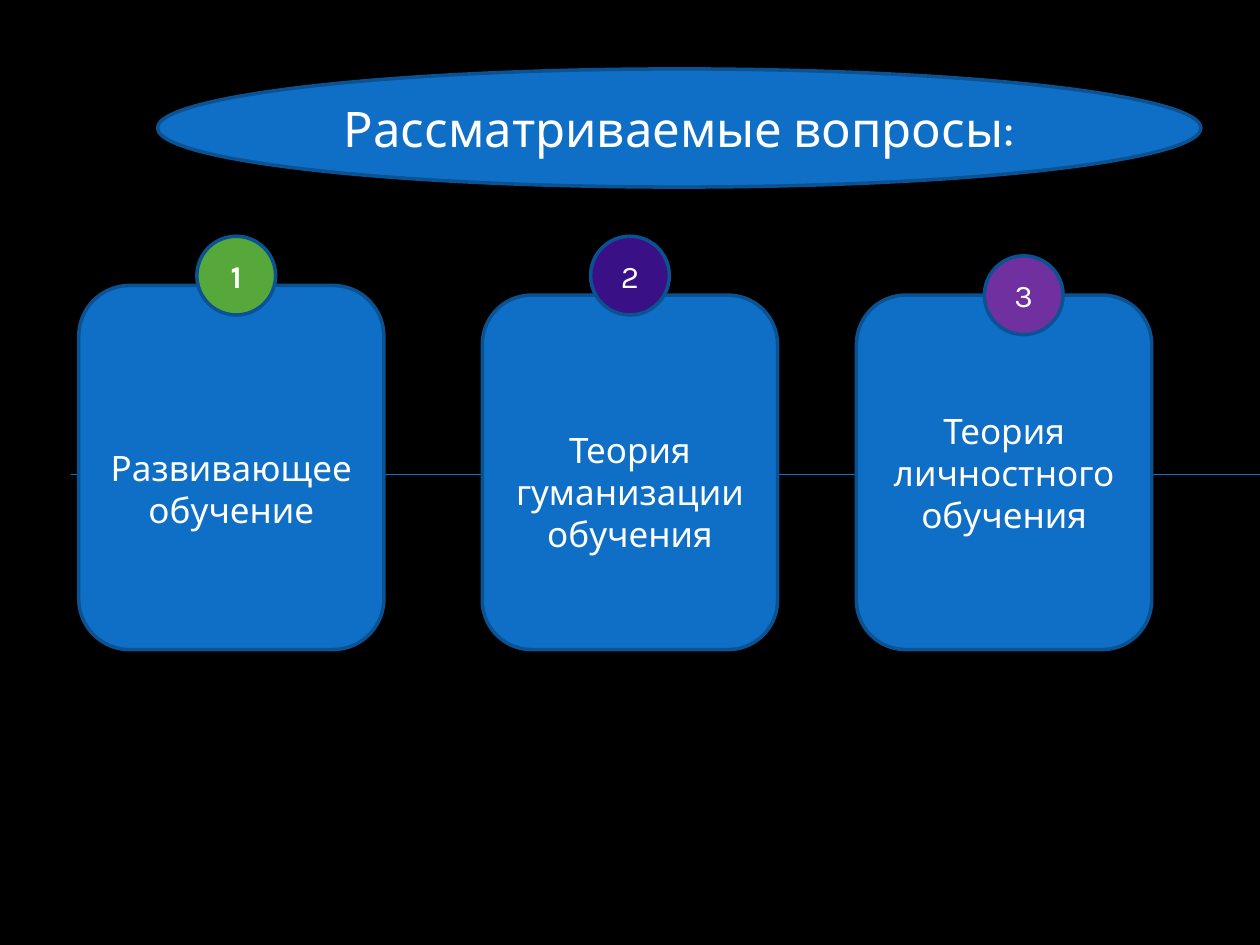
from dataclasses import dataclass

import pptx
import pptx.dml.color
import pptx.enum.shapes
import pptx.enum.text
import pptx.oxml
import pptx.oxml.ns
import pptx.shapes.autoshape
import pptx.slide
import pptx.util

Pt = pptx.util.Pt
Shapes = pptx.enum.shapes.MSO_SHAPE


@dataclass(frozen=True)
class Theme:
    background: str = "000000"
    fill: str = "0F6FC6"
    outline: str = "0B5292"
    text: str = "FFFFFF"
    font: str = "Karla"
    title_size: float = 28
    card_size: float = 20
    badge_size: float = 18
    outline_width: float = 2
    axis_width: float = 0.75


@dataclass(frozen=True)
class Box:
    left: float
    top: float
    width: float
    height: float


@dataclass(frozen=True)
class Topic:
    text: str
    card: Box
    text_drop: float  # extra top inset that lowers the centred text
    badge_color: str
    badge_top: float
    badge_bold: bool = False


THEME = Theme()
INSET = 3.6
BADGE_SIZE = 45
BADGE_LEFT, BADGE_STEP = 112.5, 225
TITLE_BOX = Box(90, 39.4, 596.2, 67.5)
AXIS_START, AXIS_END, AXIS_TOP = 40.5, 720, 271.3

TOPICS = [
    Topic("Развивающее обучение", Box(45, 163.1, 174.4, 208.1), 24, "55A839", 135, True),
    Topic("Теория гуманизации обучения", Box(275.6, 168.7, 168.7, 202.5), 22, "3A1086", 135),
    Topic("Теория личностного обучения", Box(489.4, 168.7, 168.7, 202.5), 0, "7030A0", 146.2),
]


def color(value: str) -> pptx.dml.color.RGBColor:
    return pptx.dml.color.RGBColor.from_string(value)


def set_all(target: object, values: dict) -> None:
    for name, value in values.items():
        setattr(target, name, value)


def add_label(slide: pptx.slide.Slide, kind: Shapes, box: Box, text: str, size: float,
              fill: str = THEME.fill, bold: bool = False,
              text_drop: float = 0) -> pptx.shapes.autoshape.Shape:
    """Add an outlined shape with centred text."""
    shape = slide.shapes.add_shape(
        kind, Pt(box.left), Pt(box.top), Pt(box.width), Pt(box.height))
    shape.shadow.inherit = False
    shape.fill.solid()
    shape.fill.fore_color.rgb = color(fill)
    shape.line.color.rgb = color(THEME.outline)
    shape.line.width = Pt(THEME.outline_width)

    set_all(shape.text_frame, {
        "word_wrap": True,
        "vertical_anchor": pptx.enum.text.MSO_ANCHOR.MIDDLE,
        "margin_top": Pt(INSET + text_drop),
        "margin_bottom": Pt(INSET),
    })
    paragraph = shape.text_frame.paragraphs[0]
    paragraph.alignment = pptx.enum.text.PP_ALIGN.CENTER
    run = paragraph.add_run()
    run.text = text
    set_all(run.font, {"name": THEME.font, "size": Pt(size), "bold": bold})
    run.font.color.rgb = color(THEME.text)
    return shape


def add_axis(slide: pptx.slide.Slide) -> None:
    """Add the thin horizontal line that runs behind the cards."""
    line = slide.shapes.add_connector(
        pptx.enum.shapes.MSO_CONNECTOR.STRAIGHT,
        Pt(AXIS_START), Pt(AXIS_TOP), Pt(AXIS_END), Pt(AXIS_TOP))
    line.line.color.rgb = color(THEME.fill)
    line.line.width = Pt(THEME.axis_width)
    properties = line._element.spPr
    properties.append(pptx.oxml.parse_xml(
        f"<a:effectLst {pptx.oxml.ns.nsdecls('a')}/>"))


def main() -> None:
    presentation = pptx.Presentation()
    set_all(presentation, {"slide_width": Pt(720), "slide_height": Pt(540)})
    slide = presentation.slides.add_slide(presentation.slide_layouts[6])
    slide.background.fill.solid()
    slide.background.fill.fore_color.rgb = color(THEME.background)

    add_axis(slide)

    # Topic cards
    for topic in TOPICS:
        add_label(slide, Shapes.ROUNDED_RECTANGLE, topic.card, topic.text,
                  THEME.card_size, text_drop=topic.text_drop)

    # Numbered badges, evenly spaced over the cards
    for index, topic in enumerate(TOPICS):
        box = Box(BADGE_LEFT + index * BADGE_STEP, topic.badge_top, BADGE_SIZE, BADGE_SIZE)
        add_label(slide, Shapes.OVAL, box, str(index + 1), THEME.badge_size,
                  fill=topic.badge_color, bold=topic.badge_bold)

    # Title
    add_label(slide, Shapes.OVAL, TITLE_BOX, "Рассматриваемые вопросы:", THEME.title_size)

    presentation.save("out.pptx")


if __name__ == "__main__":
    main()
